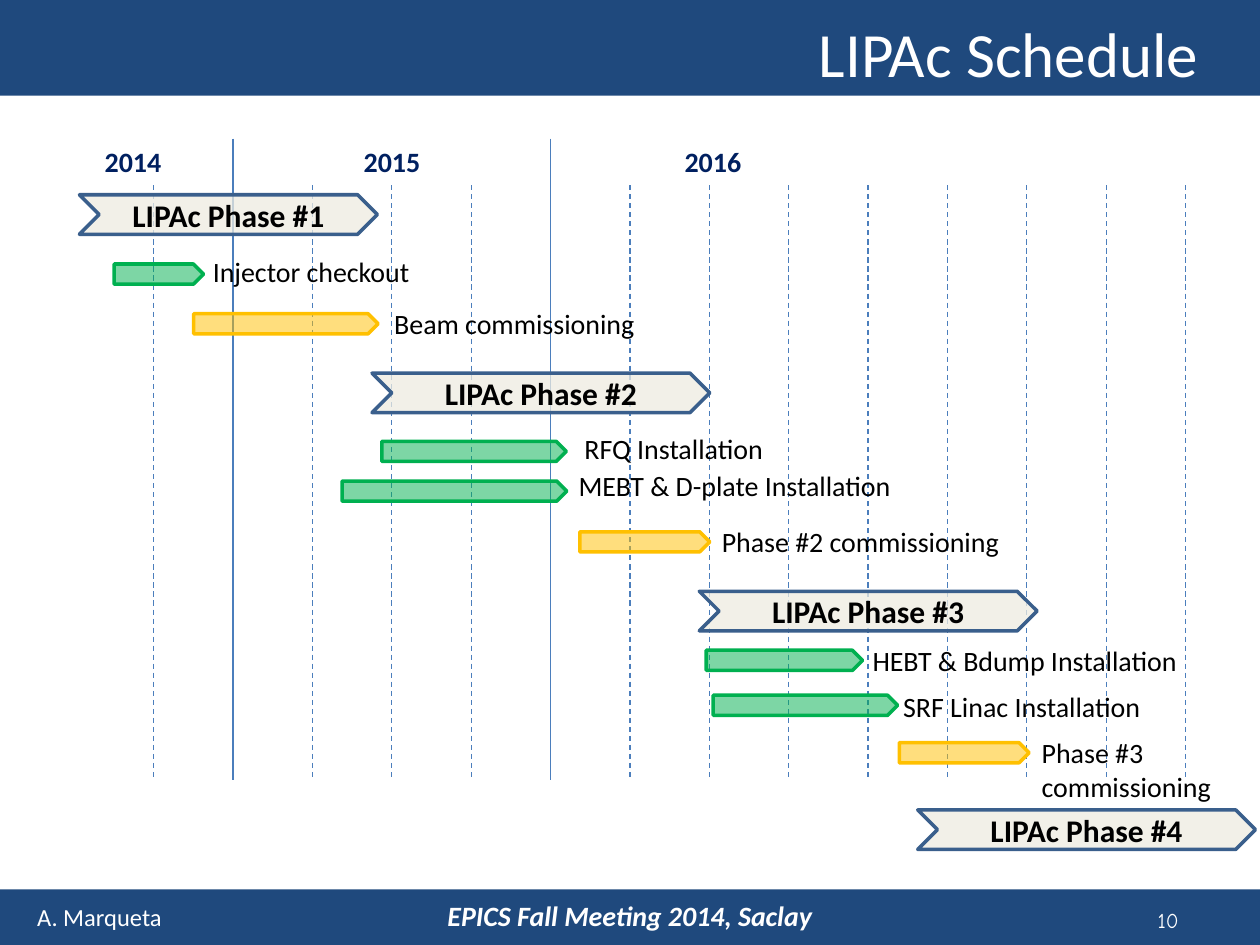
from dataclasses import dataclass

from lxml import etree
from pptx import Presentation
from pptx import util as u
from pptx.dml.color import RGBColor
from pptx.enum import dml, shapes, text
from pptx.oxml.ns import qn
from pptx.shapes.autoshape import Shape
from pptx.slide import Slide


@dataclass(frozen=True)
class Theme:
    """Colours, fonts and type sizes of the deck."""
    band: str = "1F497D"
    white: str = "FFFFFF"
    black: str = "000000"
    year: str = "002060"
    grid: str = "4B7EBC"
    phase: str = "EEECE1"
    phase_edge: str = "3A5F8C"
    install: str = "00B050"
    commission: str = "FFC000"
    font: str = "Calibri"
    number_font: str = "Comic Neue"
    title_size: int = 36
    phase_size: int = 18
    body_size: int = 16
    author_size: int = 14
    number_size: int = 12
    phase_opacity: int = 75
    task_opacity: int = 51


@dataclass(frozen=True)
class Area:
    """A rectangle in points."""
    left: float
    top: float
    width: float
    height: float


@dataclass(frozen=True)
class Style:
    """The look of a piece of text."""
    size: int
    color: str
    bold: bool = False
    italic: bool = False
    font: str = "Calibri"
    align: text.PP_ALIGN = text.PP_ALIGN.LEFT
    anchor: text.MSO_ANCHOR = text.MSO_ANCHOR.TOP


@dataclass(frozen=True)
class Phase:
    """A project phase drawn as a chevron."""
    number: int
    left: float
    top: float
    width: float


@dataclass(frozen=True)
class Task:
    """A task bar with its label."""
    label: str
    color: str
    left: float
    top: float
    width: float
    label_area: Area


THEME = Theme()
CENTER, MIDDLE = text.PP_ALIGN.CENTER, text.MSO_ANCHOR.MIDDLE
PAGE_WIDTH, PAGE_HEIGHT = 720, 540
GRID_LEFT, GRID_STEP, GRID_COUNT = 87.84, 45.36, 14
YEAR_TOP, QUARTER_TOP, GRID_BOTTOM = 79.2, 105.84, 445.68
YEAR_STARTS = (1, 5)
LINE_HEIGHT, PHASE_HEIGHT, TASK_HEIGHT = 26.64, 22.6, 11.5

YEARS = {"2014": 44, "2015": 192, "2016": 375.4}
PHASES = (
    Phase(1, 45.4, 111.3, 170.3),
    Phase(2, 212.6, 213.2, 193),
    Phase(3, 399.6, 337.9, 193),
    Phase(4, 524.4, 462.8, 193),
)
TASKS = (
    Task("Injector checkout", THEME.install, 65.2, 150.9, 51.1,
         Area(114.5, 142, 128.2, LINE_HEIGHT)),
    Task("Beam commissioning", THEME.commission, 110.7, 179.3, 105.4,
         Area(218.2, 171.6, 158.4, LINE_HEIGHT)),
    Task("RFQ Installation", THEME.install, 218.2, 252.2, 105.4,
         Area(326.9, 243.2, 118, LINE_HEIGHT)),
    Task("MEBT & D-plate Installation", THEME.install, 195.5, 274.9, 128.4,
         Area(323.5, 264.3, 193, LINE_HEIGHT)),
    Task("Phase #2 commissioning", THEME.commission, 331.4, 303.9, 74.2,
         Area(405.4, 296.4, 175, LINE_HEIGHT)),
    Task("HEBT & Bdump Installation", THEME.install, 403.6, 371.6, 89.3,
         Area(491.5, 364.3, 188.6, LINE_HEIGHT)),
    Task("SRF Linac Installation", THEME.install, 407.6, 397.3, 105.4,
         Area(509, 390.7, 150.2, LINE_HEIGHT)),
    Task("Phase #3\ncommissioning", THEME.commission, 513.9, 424.4, 74.2,
         Area(588.2, 416.9, 112.3, 46)),
)


def write(box: Shape, words: str, style: Style, wrap: bool = True) -> None:
    """Put styled text into a box."""
    frame = box.text_frame
    frame.text = words
    frame.word_wrap = wrap
    frame.vertical_anchor = style.anchor
    for para in frame.paragraphs:
        para.alignment = style.align
        for span in para.runs:
            span.font.name = style.font
            span.font.size = u.Pt(style.size)
            span.font.bold = style.bold
            span.font.italic = style.italic
            span.font.color.rgb = RGBColor.from_string(style.color)


def add_label(page: Slide, words: str, area: Area, style: Style, wrap: bool = True) -> None:
    """Add a text box."""
    box = page.shapes.add_textbox(
        u.Pt(area.left), u.Pt(area.top), u.Pt(area.width), u.Pt(area.height))
    write(box, words, style, wrap)


def add_block(page: Slide, preset: shapes.MSO_SHAPE, area: Area, fill: str,
              edge: str | None = None, opacity: int = 100) -> Shape:
    """Add a filled shape, outlined when an edge colour is given."""
    block = page.shapes.add_shape(
        preset, u.Pt(area.left), u.Pt(area.top), u.Pt(area.width), u.Pt(area.height))
    block.shadow.inherit = False
    block.fill.solid()
    block.fill.fore_color.rgb = RGBColor.from_string(fill)
    if opacity < 100:
        color = block.fill._xPr.find(qn("a:solidFill"))[0]
        etree.SubElement(color, qn("a:alpha")).set("val", str(opacity * 1000))
    if edge is None:
        block.line.fill.background()
    else:
        block.line.color.rgb = RGBColor.from_string(edge)
        block.line.width = u.Pt(2)
    return block


def add_grid_line(page: Slide, index: int) -> None:
    """Add a quarter line, solid and taller at the start of a year."""
    starts_year = index in YEAR_STARTS
    x = u.Pt(GRID_LEFT + index * GRID_STEP)
    top = u.Pt(YEAR_TOP if starts_year else QUARTER_TOP)
    line = page.shapes.add_connector(
        shapes.MSO_CONNECTOR.STRAIGHT, x, top, x, u.Pt(GRID_BOTTOM))
    line.line.color.rgb = RGBColor.from_string(THEME.grid)
    line.line.width = u.Pt(0.75)
    if not starts_year:
        line.line.dash_style = dml.MSO_LINE.DASH
    etree.SubElement(line._element.spPr, qn("a:effectLst"))


def add_phase(page: Slide, phase: Phase) -> None:
    """Add a phase chevron with its name."""
    area = Area(phase.left, phase.top, phase.width, PHASE_HEIGHT)
    block = add_block(page, shapes.MSO_SHAPE.CHEVRON, area, THEME.phase,
                      THEME.phase_edge, THEME.phase_opacity)
    write(block, f"LIPAc Phase #{phase.number}",
          Style(THEME.phase_size, THEME.black, bold=True, align=CENTER, anchor=MIDDLE))


def add_task(page: Slide, task: Task) -> None:
    """Add a task bar and its label."""
    area = Area(task.left, task.top, task.width, TASK_HEIGHT)
    add_block(page, shapes.MSO_SHAPE.PENTAGON, area, task.color, task.color,
              THEME.task_opacity)
    add_label(page, task.label, task.label_area,
              Style(THEME.body_size, THEME.black), wrap=False)


def add_frame(page: Slide) -> None:
    """Add the header and footer bands with their text."""
    for top, height in ((508.3, 31.7), (0, 54.7)):
        add_block(page, shapes.MSO_SHAPE.RECTANGLE,
                  Area(0, top, PAGE_WIDTH, height), THEME.band)
    add_label(page, "A. Marqueta", Area(14.2, 511.9, 86.4, 24.5),
              Style(THEME.author_size, THEME.white), wrap=False)
    add_label(page, "EPICS Fall Meeting 2014, Saclay", Area(172.8, 509.8, 374.4, LINE_HEIGHT),
              Style(THEME.body_size, THEME.white, bold=True, italic=True, align=CENTER))
    add_label(page, "10", Area(654.5, 514.8, 33.8, 21.6),
              Style(THEME.number_size, THEME.white, font=THEME.number_font), wrap=False)
    add_label(page, "LIPAc Schedule", Area(432.7, 0, 287.3, 59.8),
              Style(THEME.title_size, THEME.white, align=CENTER, anchor=MIDDLE))


def main() -> None:
    """Build the schedule slide."""
    deck = Presentation()
    deck.slide_width, deck.slide_height = u.Pt(PAGE_WIDTH), u.Pt(PAGE_HEIGHT)
    page = deck.slides.add_slide(deck.slide_layouts[6])
    add_frame(page)
    for index in range(GRID_COUNT):
        add_grid_line(page, index)
    for year, left in YEARS.items():
        add_label(page, year, Area(left, YEAR_TOP, 64, LINE_HEIGHT),
                  Style(THEME.body_size, THEME.year, bold=True, align=CENTER))
    for phase in PHASES:
        add_phase(page, phase)
    for task in TASKS:
        add_task(page, task)
    deck.save("out.pptx")


if __name__ == "__main__":
    main()
